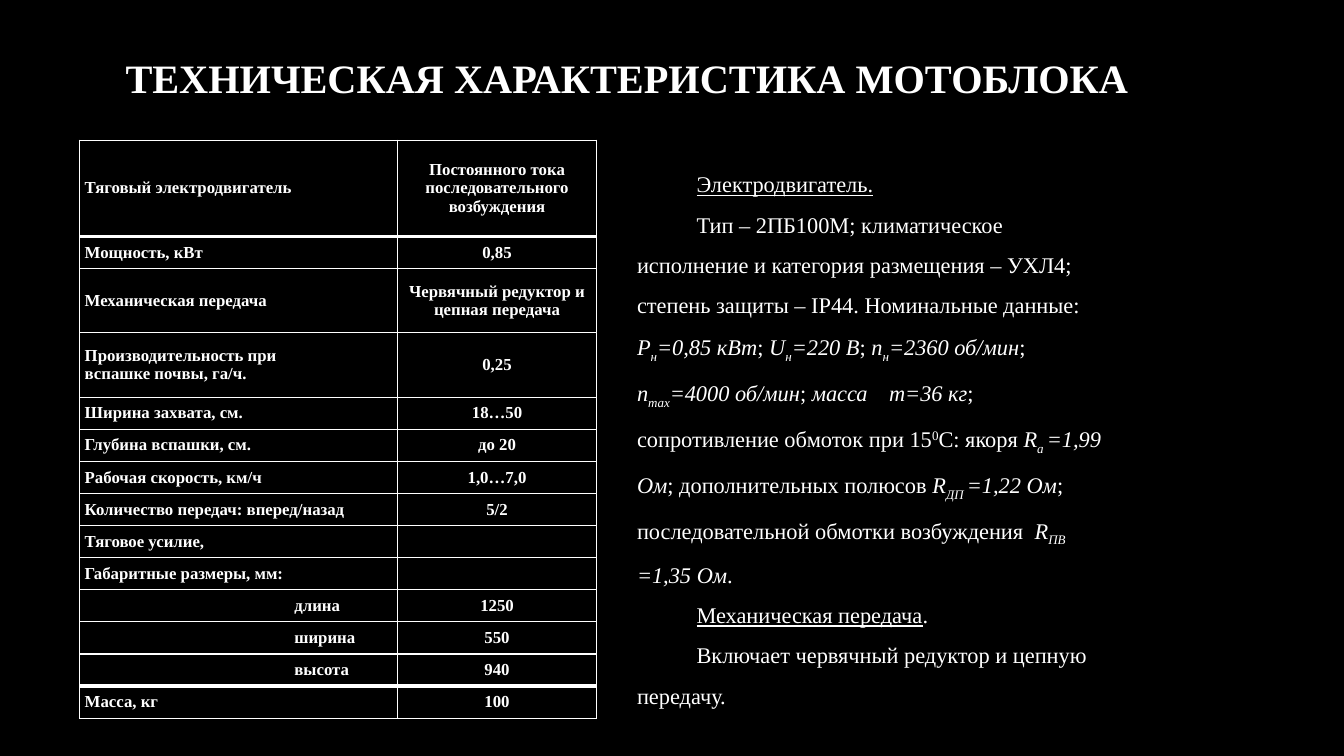
from dataclasses import dataclass

from lxml.etree import SubElement as Sub
from pptx import Presentation
from pptx.dml.color import RGBColor as Color
from pptx.enum.text import MSO_ANCHOR as Anchor, MSO_AUTO_SIZE as Fit, PP_ALIGN as Align
from pptx.oxml.ns import qn
from pptx.util import Inches, Pt


@dataclass(frozen=True)
class Theme:
    font: str = "Times New Roman"
    ink: Color = Color(255, 255, 255)
    back: Color = Color(0, 0, 0)
    title: float = 28.8
    cell: float = 12
    body: float = 16
    thin: float = 1
    thick: float = 3


THEME = Theme()
TITLE = "ТЕХНИЧЕСКАЯ ХАРАКТЕРИСТИКА МОТОБЛОКА"
ROWS = [
    ("Тяговый электродвигатель", "Постоянного тока последовательного возбуждения", 3),
    ("Мощность, кВт", "0,85", 1),
    ("Механическая передача", "Червячный редуктор и цепная передача", 2),
    ("Производительность при\nвспашке почвы, га/ч.", "0,25", 2),
    ("Ширина захвата, см.", "18…50", 1),
    ("Глубина вспашки, см.", "до 20", 1),
    ("Рабочая скорость, км/ч", "1,0…7,0", 1),
    ("Количество передач: вперед/назад", "5/2", 1),
    ("Тяговое усилие,", "", 1),
    ("Габаритные размеры, мм:", "", 1),
    ("длина", "1250", 1),
    ("ширина", "550", 1),
    ("высота", "940", 1),
    ("Масса, кг", "100", 1),
]
SIZES = ("длина", "ширина", "высота")
HEAVY = (1, len(ROWS) - 1)
PLAIN, LINE, SLANT, SUB, SUPER = range(5)
BODY = [
    [("Электродвигатель.", LINE)],
    [
        ("Тип – 2ПБ100М; климатическое исполнение и категория размещения – УХЛ4; "
         "степень защиты – ІР44. Номинальные данные: ", PLAIN),
        ("Р", SLANT), ("н", SUB), ("=0,85 кВт", SLANT), ("; ", PLAIN),
        ("U", SLANT), ("н", SUB), ("=220 В", SLANT), ("; ", PLAIN),
        ("n", SLANT), ("н", SUB), ("=2360 об/мин", SLANT), ("; ", PLAIN),
        ("n", SLANT), ("max", SUB), ("=4000 об/мин", SLANT), ("; ", PLAIN),
        ("масса \tm=36 кг", SLANT),
        ("; сопротивление обмоток при 15", PLAIN), ("0", SUPER), ("С: якоря ", PLAIN),
        ("R", SLANT), ("a ", SUB), ("=1,99 Ом", SLANT),
        ("; дополнительных полюсов ", PLAIN),
        ("R", SLANT), ("ДП ", SUB), ("=1,22 Ом", SLANT),
        ("; последовательной обмотки возбуждения  ", PLAIN),
        ("R", SLANT), ("ПВ ", SUB), ("=1,35 Ом", SLANT), (".", PLAIN),
    ],
    [("Механическая передача", LINE), (".", PLAIN)],
    [("Включает червячный редуктор и цепную передачу.", PLAIN)],
]


def set_font(font, size, bold=False):
    font.name = THEME.font
    font.size = Pt(size)
    font.bold = bold
    font.color.rgb = THEME.ink


def add_title(slide):
    title = slide.shapes.title
    title.left, title.top = Inches(0.68), Inches(0.33)
    title.width, title.height = Inches(11.08), Inches(0.88)
    frame = title.text_frame
    frame.text = TITLE
    frame.vertical_anchor = Anchor.MIDDLE
    para = frame.paragraphs[0]
    para.alignment = Align.CENTER
    set_font(para.font, THEME.title, True)


def set_edge(cell, tag, width):
    edge = Sub(cell._tc.get_or_add_tcPr(), qn(tag), w=str(Pt(width)))
    fill = Sub(edge, qn("a:solidFill"))
    Sub(fill, qn("a:srgbClr"), val=str(THEME.ink))


def fill_cell(cell, text, align, row):
    cell.text = text
    cell.vertical_anchor = Anchor.MIDDLE
    cell.margin_left = cell.margin_right = Inches(0.05)
    cell.margin_top = cell.margin_bottom = 0
    for para in cell.text_frame.paragraphs:
        para.alignment = align
        if text in SIZES:
            para._p.get_or_add_pPr().set("marL", str(Inches(2.08)))
        set_font(para.font, THEME.cell, True)
    top, base = (THEME.thick if line in HEAVY else THEME.thin for line in (row, row + 1))
    for tag, width in (("a:lnL", THEME.thin), ("a:lnR", THEME.thin),
                       ("a:lnT", top), ("a:lnB", base)):
        set_edge(cell, tag, width)
    cell.fill.solid()
    cell.fill.fore_color.rgb = THEME.back


def add_specs(slide):
    height = Inches(5.74)
    unit = height // sum(span for _, _, span in ROWS)
    table = slide.shapes.add_table(
        len(ROWS), 2, Inches(0.79), Inches(1.39), Inches(5.13), height).table
    table.first_row = table.horz_banding = False
    table.columns[0].width, table.columns[1].width = Inches(3.15), Inches(1.98)
    for row, (label, value, span) in enumerate(ROWS):
        table.rows[row].height = unit * span
        fill_cell(table.cell(row, 0), label, Align.LEFT, row)
        fill_cell(table.cell(row, 1), value, Align.CENTER, row)


def add_run(para, text, style):
    run = para.add_run()
    run.text = text
    if style == LINE:
        run.font.underline = True
    if style in (SLANT, SUB):
        run.font.italic = True
    if style in (SUB, SUPER):
        shift = "-25000" if style == SUB else "30000"
        run._r.get_or_add_rPr().set("baseline", shift)


def add_body(slide):
    box = slide.shapes.add_textbox(Inches(6.22), Inches(1.51), Inches(4.96), Inches(5.35))
    frame = box.text_frame
    frame.word_wrap = True
    frame.auto_size = Fit.SHAPE_TO_FIT_TEXT
    for index, parts in enumerate(BODY):
        para = frame.add_paragraph() if index else frame.paragraphs[0]
        para.alignment = Align.LEFT if index else Align.JUSTIFY
        para.line_spacing = 1.5
        para._p.get_or_add_pPr().set("indent", str(Inches(0.59)))
        set_font(para.font, THEME.body)
        for text, style in parts:
            add_run(para, text, style)


def main():
    deck = Presentation()
    deck.slide_width, deck.slide_height = Inches(13.33), Inches(7.5)
    slide = deck.slides.add_slide(deck.slide_layouts[5])
    slide.background.fill.solid()
    slide.background.fill.fore_color.rgb = THEME.back
    add_title(slide)
    add_specs(slide)
    add_body(slide)
    deck.save("out.pptx")


if __name__ == "__main__":
    main()
